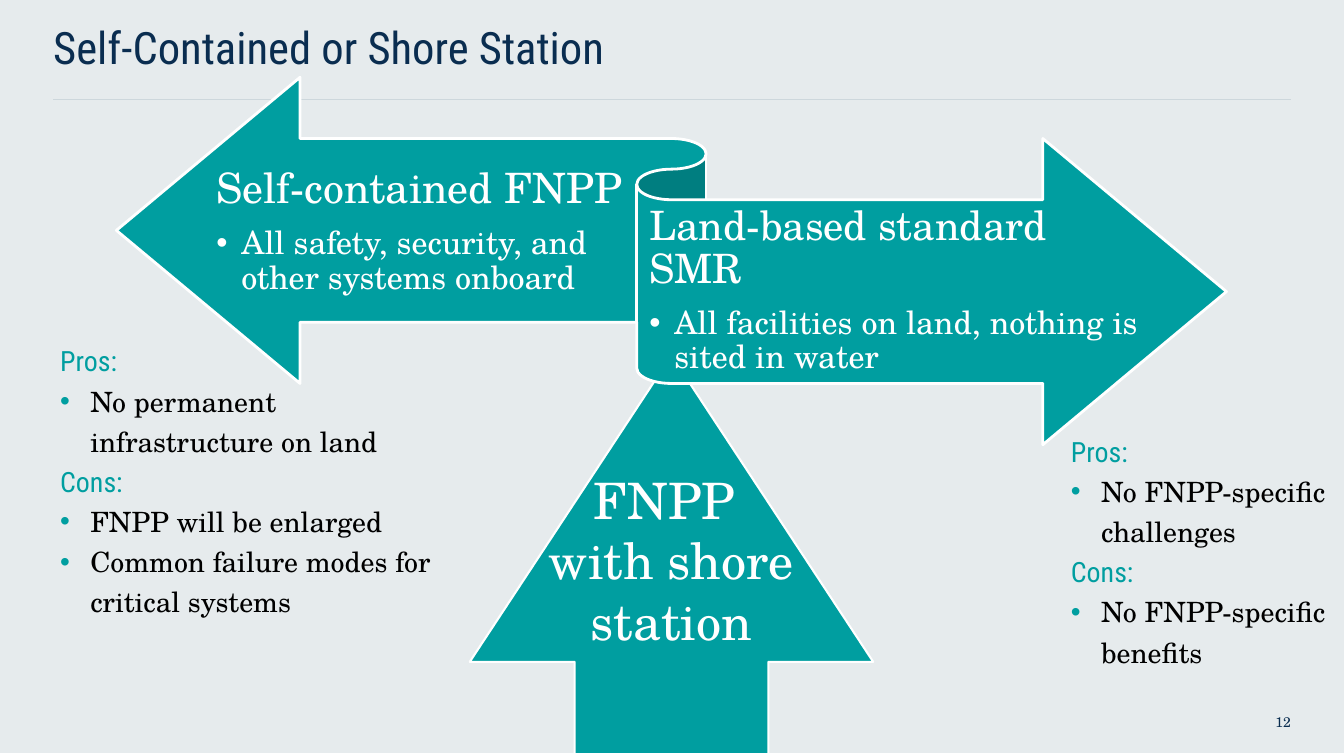
from lxml import etree
from pptx import Presentation
from pptx import util as u
from pptx.dml.color import RGBColor
from pptx.enum import shapes, text
from pptx.oxml.ns import qn

TEAL = RGBColor(0x00, 0x9E, 0xA0)
NAVY = RGBColor(0x0A, 0x2D, 0x50)
WHITE = RGBColor(0xFF, 0xFF, 0xFF)
BLACK = RGBColor(0x00, 0x00, 0x00)
RULE = RGBColor(0xCD, 0xD7, 0xDC)
BACKDROP = RGBColor(0xE6, 0xEB, 0xED)

HEADING = "Roboto Condensed"
BODY = "TeX Gyre Schola"
WIDTH, HEIGHT = 13.39, 7.5
MARGIN = 0.53

FRAME = dict(word_wrap=True, margin_left=0, margin_right=0, margin_top=0, margin_bottom=0)


def inches(*lengths):
    return [u.Inches(length) for length in lengths]


def apply(target, values):
    for name, value in values.items():
        setattr(target, name, value)


def add_bullet(para, indent, color):
    props = para._p.get_or_add_pPr()
    props.set("marL", str(u.Inches(indent)))
    props.set("indent", str(-u.Inches(indent)))
    tint = etree.SubElement(props, qn("a:buClr"))
    etree.SubElement(tint, qn("a:srgbClr"), val=str(color))
    etree.SubElement(props, qn("a:buFont"), typeface="Arial")
    etree.SubElement(props, qn("a:buChar"), char="•")


def write(frame, lines, **settings):
    apply(frame, {**FRAME, **settings})
    for index, (words, font, size, color, layout) in enumerate(lines):
        para = frame.paragraphs[0] if index == 0 else frame.add_paragraph()
        apply(para, layout)
        span = para.add_run()
        span.text = words
        apply(span.font, dict(name=font, size=u.Pt(size)))
        span.font.color.rgb = color
        yield para


def add_text(page, box, lines, **settings):
    frame = page.shapes.add_textbox(*inches(*box)).text_frame
    return list(write(frame, lines, **settings))


def paint(shape, weight):
    shape.shadow.inherit = False
    shape.fill.solid()
    shape.fill.fore_color.rgb = TEAL
    shape.line.color.rgb = WHITE
    shape.line.width = u.Pt(weight)


def add_header(page, box, title):
    left, top, width, height = box
    base = top + height
    rule = page.shapes.add_connector(
        shapes.MSO_CONNECTOR.STRAIGHT, *inches(left, base, left + width, base))
    rule.line.color.rgb = RULE
    rule.line.width = u.Pt(1)
    etree.SubElement(rule._element.spPr, qn("a:effectLst"))
    add_text(page, box, [(title, HEADING, 32, NAVY, {})])


def add_up_arrow(page, box, lines):
    left, top, width, height = box
    shares = [(0.5, 0), (1, 0.75), (0.74, 0.75), (0.74, 1), (0.26, 1), (0.26, 0.75), (0, 0.75)]
    points = [inches(left + x * width, top + y * height) for x, y in shares]
    builder = page.shapes.build_freeform(*points[0])
    builder.add_line_segments(points[1:], close=True)
    arrow = builder.convert_to_shape()
    paint(arrow, 1.5)
    centred = dict(alignment=text.PP_ALIGN.CENTER)
    list(write(arrow.text_frame, [(line, BODY, 36, WHITE, centred) for line in lines],
               vertical_anchor=text.MSO_ANCHOR.MIDDLE,
               margin_left=u.Inches(0.1), margin_right=u.Inches(0.1)))


def add_ribbon(page, box, sides):
    left, top, width, height = box
    ribbon = page.shapes.add_shape(shapes.MSO_SHAPE.LEFT_RIGHT_RIBBON, *inches(*box))
    paint(ribbon, 2)
    for x, y, share, size, heading, detail in sides:
        area = (left + x * width, top + y * height, share * width, 0.49 * height)
        lines = [
            (heading, BODY, size, WHITE, dict(line_spacing=0.9, space_after=u.Pt(0.35 * size))),
            (detail, BODY, 23, WHITE, dict(line_spacing=0.9, space_after=u.Pt(3.5))),
        ]
        paras = add_text(page, area, lines, vertical_anchor=text.MSO_ANCHOR.MIDDLE,
                         margin_top=u.Inches(0.12), margin_bottom=u.Inches(0.12))
        add_bullet(paras[1], 0.25, WHITE)


def add_pros_cons(page, box, pros, cons):
    spacing = dict(line_spacing=1.2)
    lines = []
    for label, points in (("Pros:", pros), ("Cons:", cons)):
        lines.append((label, HEADING, 20, TEAL, spacing))
        lines += [(point, BODY, 20, BLACK, spacing) for point in points]
    for para, line in zip(add_text(page, box, lines), lines):
        if line[1] == BODY:
            add_bullet(para, 0.3, TEAL)


def add_page_number(page, box, number):
    right = dict(alignment=text.PP_ALIGN.RIGHT)
    add_text(page, box, [(number, BODY, 10, NAVY, right)])


def main():
    deck = Presentation()
    deck.slide_width, deck.slide_height = inches(WIDTH, HEIGHT)
    page = deck.slides.add_slide(deck.slide_layouts[6])
    page.background.fill.solid()
    page.background.fill.fore_color.rgb = BACKDROP

    add_header(page, (MARGIN, 0.2, WIDTH - 2 * MARGIN, 0.79), "Self-Contained or Shore Station")
    add_up_arrow(page, (4.68, 3.54, 4.02, 4.07), ["FNPP ", "with shore station"])
    add_ribbon(page, (1.16, 0.77, 11.06, 3.66), [
        (0.09, 0.175, 0.39, 30, "Self-contained FNPP",
         "All safety, security, and other systems onboard"),
        (0.48, 0.335, 0.45, 29, "Land-based standard SMR",
         "All facilities on land, nothing is sited in water"),
    ])
    add_page_number(page, (WIDTH - MARGIN - 1.05, 7.11, 1.05, 0.39), "12")
    add_pros_cons(page, (0.6, 3.36, 3.83, 3.02),
                  ["No permanent infrastructure on land"],
                  ["FNPP will be enlarged", "Common failure modes for critical systems"])
    add_pros_cons(page, (10.67, 4.26, 2.94, 3.02),
                  ["No FNPP-specific challenges"],
                  ["No FNPP-specific benefits"])
    deck.save("out.pptx")


if __name__ == "__main__":
    main()
